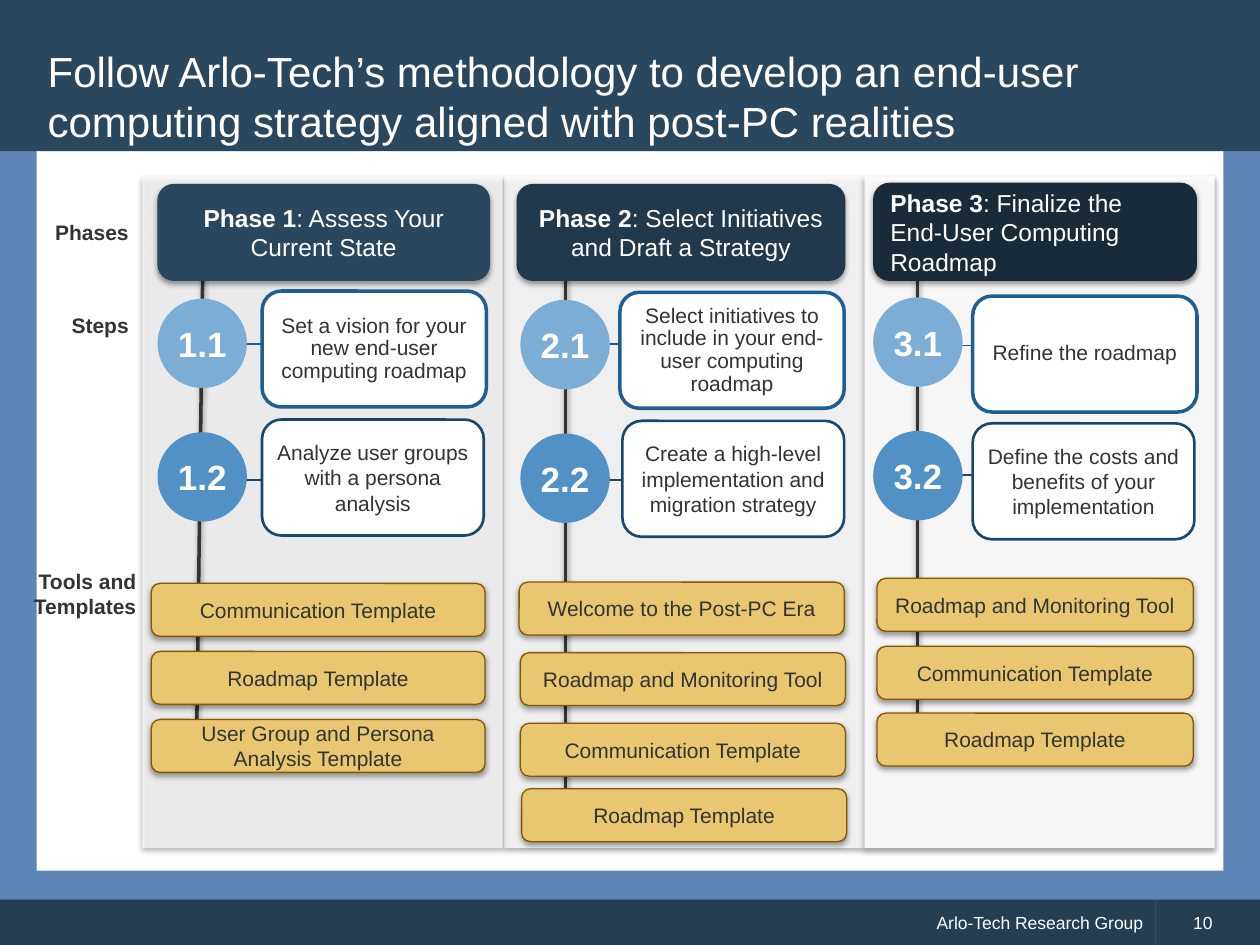
from pptx import Presentation
from pptx.dml.color import RGBColor
from pptx.enum.shapes import MSO_CONNECTOR as Conn, MSO_SHAPE as Kind
from pptx.enum.text import MSO_ANCHOR as Anchor, PP_ALIGN as Align
from pptx.oxml import parse_xml
from pptx.oxml.ns import nsdecls
from pptx.util import Inches, Pt

deck = Presentation()
deck.slide_width, deck.slide_height = Inches(10), Inches(7.5)
slide = deck.slides.add_slide(deck.slide_layouts[6])
shapes = slide.shapes

# Grid of 1000 columns by 750 rows, with square cells
CELL = deck.slide_width // 1000
hue = RGBColor.from_string
RECT, ROUND, OVAL = Kind.RECTANGLE, Kind.ROUNDED_RECTANGLE, Kind.OVAL
WHITE, INK = "FFFFFF", "333333"
MID, LEFT, RIGHT = Align.CENTER, Align.LEFT, Align.RIGHT


def finish(item, line, shade):
    """Set the outline, then a soft shadow or none."""
    if line:
        item.line.color.rgb = hue(line[0])
        item.line.width = Pt(line[1])
    else:
        item.line.fill.background()
    cast = ('<a:outerShdw blurRad="40000" dist="20000" dir="5400000" rotWithShape="0">'
            '<a:srgbClr val="000000"><a:alpha val="38000"/></a:srgbClr>'
            '</a:outerShdw>') if shade else ""
    item._element.spPr.append(
        parse_xml(f'<a:effectLst {nsdecls("a")}>{cast}</a:effectLst>'))


def box(kind, at, fill=None, line=None, shade=False, text="", lead="", size=12,
        ink=INK, bold=False, align=MID, pad=(10, 5, 10, 5), gap=1.0):
    """Add a shape, or a text box when kind is None; lead is bold text."""
    spot = [n * CELL for n in at]
    if kind is None:
        item = shapes.add_textbox(*spot)
    else:
        item = shapes.add_shape(kind, *spot)
        item.fill.solid()
        item.fill.fore_color.rgb = hue(fill)
        finish(item, line, shade)
    frame = item.text_frame
    sides = ("margin_left", "margin_top", "margin_right", "margin_bottom")
    look = {"word_wrap": True, "vertical_anchor": Anchor.MIDDLE}
    look.update((side, n * CELL) for side, n in zip(sides, pad))
    for key, val in look.items():
        setattr(frame, key, val)
    if text:
        para = frame.paragraphs[0]
        para.alignment, para.line_spacing = align, gap
        for words, heavy in ((lead, True), (text, bold)):
            if words:
                run = para.add_run()
                run.text = words
                run.font.color.rgb = hue(ink)
                for key, val in {"name": "Arial", "size": Pt(size), "bold": heavy}.items():
                    setattr(run.font, key, val)
    return item


# Frame, header band and footer
for at in ((0, 0, 29, 750), (971, 0, 29, 750), (0, 691, 1000, 59)):
    box(RECT, at, "5F85B7")
box(RECT, (0, 0, 1000, 120), "29475F")
box(RECT, (0, 714, 917, 36), "243F54", text="Arlo-Tech Research Group",
    size=10, ink=WHITE, align=RIGHT)
box(RECT, (917, 714, 83, 36), "243F54", text="10",
    size=10, ink=WHITE, align=LEFT, pad=(30, 5, 10, 5))

# Column panels in see-through white
for left, wide, part in ((400, 286, 80), (686, 278, 90), (113, 286, 70)):
    panel = box(RECT, (left, 140, wide, 533), WHITE, shade=True)
    tint = panel._element.spPr.find(".//{*}solidFill/{*}srgbClr")
    tint.append(parse_xml(f'<a:alpha {nsdecls("a")} val="{part * 1000}"/>'))

# Title
box(None, (28, 28, 943, 96), size=24, ink=WHITE, align=LEFT,
    text="Follow Arlo-Tech’s methodology to develop an end-user "
         "computing strategy aligned with post-PC realities")

# Phases: head (place, fill, align), rail, circle spot, step boxes, tools
phases = [
    dict(head=(125, 146, 264, 77), fill="29475F", align=MID,
         text=": Assess Your Current State", rail=(161, 209, 156, 591),
         disc=(125, 237), ties=((187, 273), (181, 381)),
         steps=((208, 231, "Set a vision for your new end-user computing roadmap"),
                (208, 333, "Analyze user groups with a persona analysis")),
         wide=265,
         tools=((120, 463, "Communication Template"),
                (120, 517, "Roadmap Template"),
                (120, 571, "User Group and Persona Analysis Template"))),
    dict(head=(410, 146, 261, 77), fill="21394C", align=MID,
         text=": Select Initiatives and Draft a Strategy", rail=(449, 218, 449, 659),
         disc=(413, 238), ties=((481, 273), (475, 381)),
         steps=((492, 232, "Select initiatives to include in your end-user computing roadmap"),
                (494, 334, "Create a high-level implementation and migration strategy")),
         wide=258,
         tools=((412, 462, "Welcome to the Post-PC Era"),
                (413, 518, "Roadmap and Monitoring Tool"),
                (413, 574, "Communication Template"),
                (414, 626, "Roadmap Template"))),
    dict(head=(693, 145, 257, 78), fill="192B39", align=LEFT,
         text=": Finalize the End-User Computing Roadmap", rail=(728, 222, 728, 586),
         disc=(693, 236), ties=((755, 274), (748, 377)),
         steps=((772, 235, "Refine the roadmap"),
                (772, 336, "Define the costs and benefits of your implementation")),
         wide=251,
         tools=((696, 459, "Roadmap and Monitoring Tool"),
                (696, 513, "Communication Template"),
                (696, 566, "Roadmap Template"))),
]
# Step looks: circle fill, outline, box width, line spacing
looks = (("7CADD4", ("1E5E92", 2), 178, 0.9), ("5191C5", ("16476E", 1.5), 176, 1.0))

for num, phase in enumerate(phases, 1):
    # Ties and rail lie under the boxes
    lines = [((x, y, x + 34, y), (look[1][0], 0.75), False)
             for (x, y), look in zip(phase["ties"], looks)]
    lines.append((phase["rail"], (INK, 2), True))
    for ends, line, shade in lines:
        finish(shapes.add_connector(Conn.STRAIGHT, *(n * CELL for n in ends)), line, shade)

    # Phase head
    box(ROUND, phase["head"], phase["fill"], shade=True, lead=f"Phase {num}",
        text=phase["text"], size=14, ink=WHITE, align=phase["align"])

    # Numbered steps
    x, y = phase["disc"]
    for row, (step, look) in enumerate(zip(phase["steps"], looks)):
        left, top, text = step
        fill, line, wide, gap = look
        box(ROUND, (left, top, wide, 92), WHITE, line, text=text,
            pad=(4, 5, 4, 5), gap=gap)
        box(OVAL, (x, y + row * 106, 71, 71), fill, text=f"{num}.{row + 1}",
            size=20, ink=WHITE, bold=True, pad=(0, 0, 0, 0))

    # Tools and templates
    for left, top, text in phase["tools"]:
        box(ROUND, (left, top, phase["wide"], 42), "E8C770", ("825800", 0.75),
            True, text=text)

# Row labels
for at, text in (((24, 169, 88, 30), "Phases"), ((24, 243, 88, 30), "Steps"),
                 ((16, 446, 102, 50), "Tools and Templates")):
    box(None, at, text=text, bold=True, align=RIGHT)

deck.save("out.pptx")
